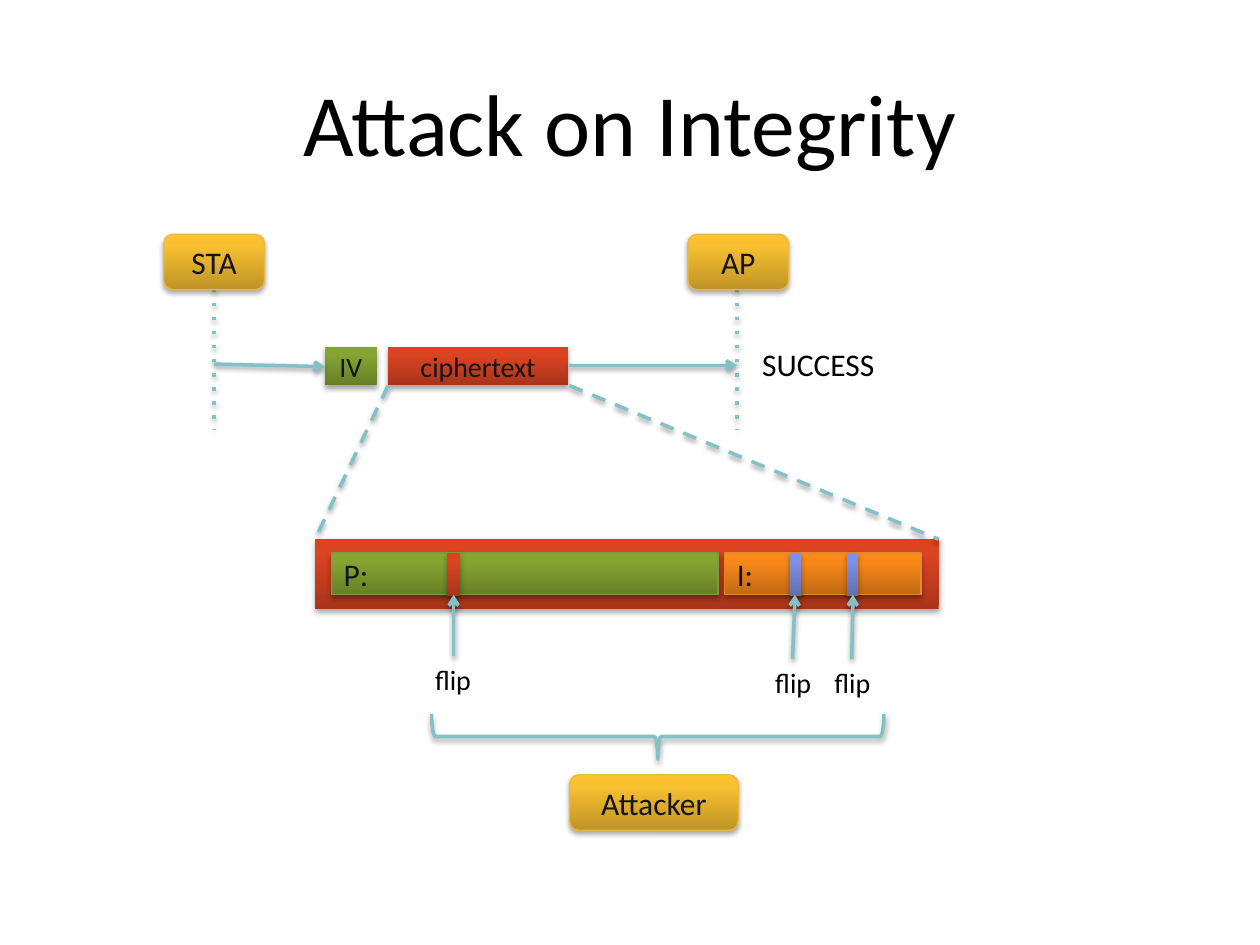
"""Build the slide showing a bit-flip attack on message integrity."""
from copy import deepcopy

from lxml.etree import SubElement
from pptx import Presentation
from pptx.dml.color import RGBColor
from pptx.enum.shapes import MSO_CONNECTOR, MSO_SHAPE
from pptx.enum.text import MSO_ANCHOR, PP_ALIGN
from pptx.oxml.ns import qn
from pptx.util import Inches, Pt

FONT = "Calibri"
BLACK = RGBColor(0x00, 0x00, 0x00)
INK = RGBColor(0x13, 0x14, 0x1C)
TEAL = RGBColor(0x83, 0xC1, 0xC6)
GOLD_EDGE = RGBColor(0xE7, 0xBA, 0x45)
GREEN_EDGE = RGBColor(0x81, 0x9B, 0x3D)
ORANGE_EDGE = RGBColor(0xE6, 0x8A, 0x2F)
GOLD = (RGBColor(0xBF, 0x94, 0x26), RGBColor(0xF8, 0xC0, 0x31), RGBColor(0xFD, 0xC3, 0x2D))
RED = (RGBColor(0xA9, 0x34, 0x1A), RGBColor(0xDB, 0x44, 0x22), RGBColor(0xE0, 0x42, 0x1E))
GREEN = (RGBColor(0x66, 0x7F, 0x26), RGBColor(0x85, 0xA4, 0x32), RGBColor(0x87, 0xA7, 0x30))
ORANGE = (RGBColor(0xC0, 0x69, 0x14), RGBColor(0xFA, 0x88, 0x19), RGBColor(0xFF, 0x89, 0x15))
BLUE = (RGBColor(0x62, 0x6E, 0xB1), RGBColor(0x80, 0x8F, 0xE6), RGBColor(0x7E, 0x8E, 0xE9))

prs = Presentation()
prs.slide_width, prs.slide_height = Inches(10), Inches(7.5)
slide = prs.slides.add_slide(prs.slide_layouts[6])
shadows = []


def add_block(kind, box, gradient=None, edge=None, text="", size=18, color=INK,
              align=PP_ALIGN.CENTER, anchor=MSO_ANCHOR.MIDDLE, wrap=True):
    box = [Inches(v) for v in box]
    if kind is None:
        block = slide.shapes.add_textbox(*box)
    else:
        block = slide.shapes.add_shape(kind, *box)
        shadows.append((block, 35, 1.8))
    if gradient:
        block.fill.gradient()
        block.fill.gradient_angle = 90
        stops = block._element.spPr.find(".//" + qn("a:gsLst"))
        stops.append(deepcopy(stops[0]))
        for stop, place, shade in zip(block.fill.gradient_stops, (0, 0.8, 1), gradient):
            stop.position = place
            stop.color.rgb = shade
    else:
        block.fill.background()
    if edge:
        block.line.color.rgb = edge
        block.line.width = Pt(0.75)
    else:
        block.line.fill.background()
    if text:
        frame = block.text_frame
        frame.word_wrap = wrap
        frame.vertical_anchor = anchor
        frame.paragraphs[0].alignment = align
        run = frame.paragraphs[0].add_run()
        run.text = text
        run.font.name = FONT
        run.font.size = Pt(size)
        run.font.color.rgb = color
    return block


def add_link(x1, y1, x2, y2, dash=None):
    link = slide.shapes.add_connector(
        MSO_CONNECTOR.STRAIGHT, Inches(x1), Inches(y1), Inches(x2), Inches(y2))
    link.line.color.rgb = TEAL
    link.line.width = Pt(2)
    outline = link._element.spPr.find(qn("a:ln"))
    if dash:
        SubElement(outline, qn("a:prstDash"), val=dash)
    else:
        SubElement(outline, qn("a:tailEnd"), type="arrow")
    shadows.append((link, 38, 1.6))


add_block(None, (0.5, 0.5, 9, 1.25), text="Attack on Integrity", size=50,
          color=BLACK, anchor=MSO_ANCHOR.TOP)

for lifeline in (1.7, 5.85):
    add_link(lifeline, 2.29, lifeline, 3.41, "dot")
for station, left in (("STA", 1.3), ("AP", 5.46)):
    add_block(MSO_SHAPE.ROUNDED_RECTANGLE, (left, 1.86, 0.8, 0.44), GOLD, GOLD_EDGE, station)

add_block(MSO_SHAPE.RECTANGLE, (3.08, 2.75, 1.43, 0.31), RED, text="ciphertext", size=16)
add_block(MSO_SHAPE.RECTANGLE, (2.58, 2.75, 0.41, 0.31), GREEN, text="IV", size=16)
add_link(1.7, 2.89, 2.58, 2.91)

add_block(MSO_SHAPE.RECTANGLE, (2.5, 4.28, 4.95, 0.55), RED)
for field, left, width, gradient, edge in (
        ("P:", 2.63, 3.07, GREEN, GREEN_EDGE), ("I:", 5.75, 1.56, ORANGE, ORANGE_EDGE)):
    add_block(MSO_SHAPE.RECTANGLE, (left, 4.39, width, 0.33), gradient, edge, field,
              align=PP_ALIGN.LEFT)
add_link(3.08, 3.06, 2.5, 4.28, "dash")
add_link(4.52, 3.06, 7.45, 4.28, "dash")

for bit_left, bit_width, gradient, label_left, label_top, tail_x, tip_x in (
        (3.55, 0.1, RED, 3.35, 5.21, 3.6, 3.6),
        (6.27, 0.09, BLUE, 6.05, 5.23, 6.29, 6.31),
        (6.72, 0.09, BLUE, 6.52, 5.23, 6.76, 6.77)):
    add_block(MSO_SHAPE.RECTANGLE, (bit_left, 4.39, bit_width, 0.34), gradient)
    add_block(None, (label_left, label_top, 0.49, 0.37), text="flip", size=16,
              color=BLACK, anchor=MSO_ANCHOR.TOP, wrap=False)
    add_link(tail_x, label_top, tip_x, 4.72)

add_block(MSO_SHAPE.ROUNDED_RECTANGLE, (4.52, 6.15, 1.34, 0.44), GOLD, GOLD_EDGE, "Attacker")
brace = add_block(MSO_SHAPE.LEFT_BRACE, (5.04, 4.05, 0.36, 3.59), edge=TEAL)
brace.rotation = 270
brace.line.width = Pt(2)

add_link(4.52, 2.9, 5.85, 2.9)
add_block(None, (5.95, 2.69, 1.22, 0.4), text="SUCCESS", color=BLACK,
          align=PP_ALIGN.LEFT, anchor=MSO_ANCHOR.TOP, wrap=False)

for part, opacity, distance in shadows:
    effects = SubElement(part._element.spPr, qn("a:effectLst"))
    shadow = SubElement(effects, qn("a:outerShdw"), blurRad=str(Pt(3.1)),
                        dist=str(Pt(distance)), dir="5400000", rotWithShape="0")
    tint = SubElement(shadow, qn("a:srgbClr"), val=str(BLACK))
    SubElement(tint, qn("a:alpha"), val=str(opacity * 1000))

prs.save("out.pptx")
